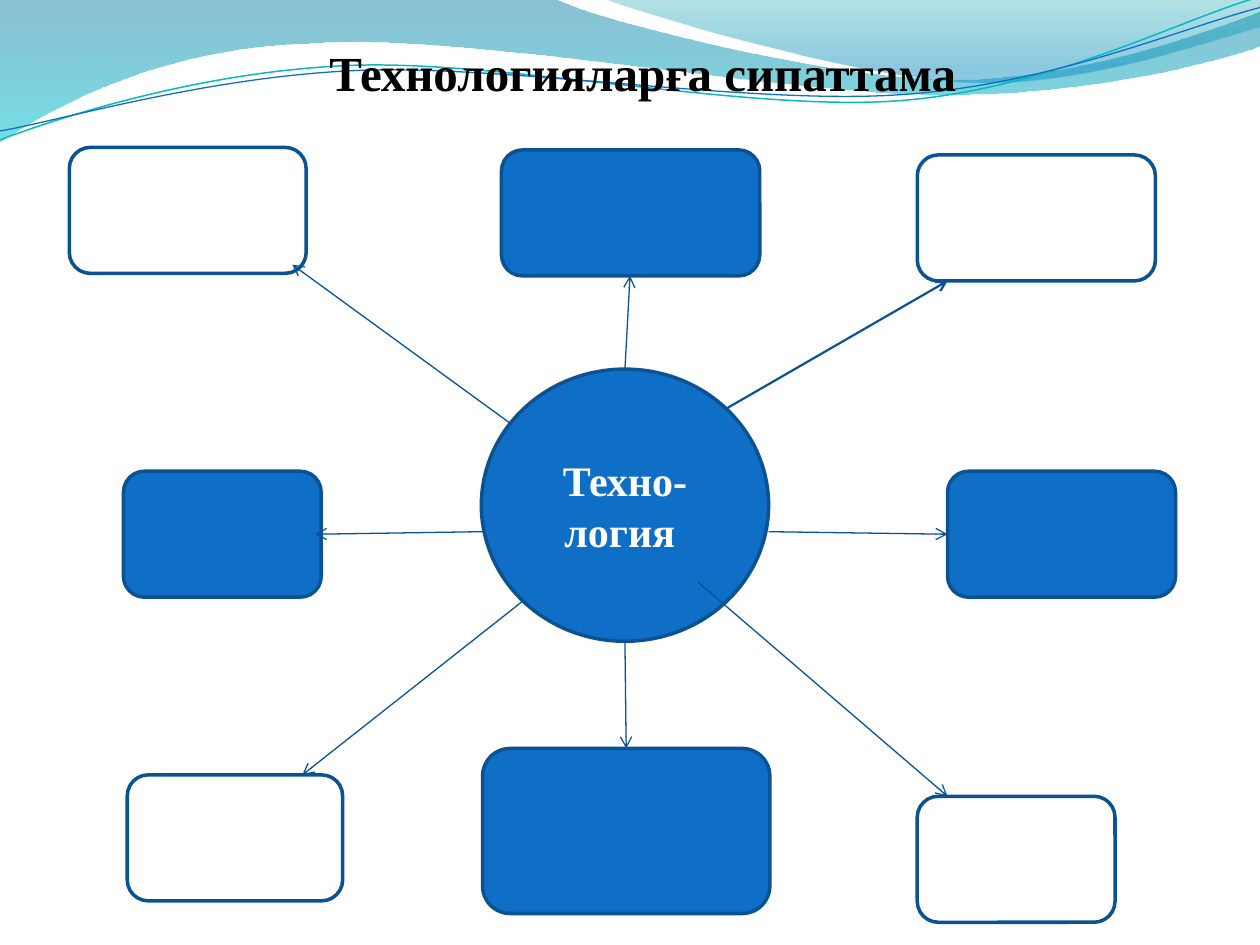
from math import cos, radians, sin
from pptx import Presentation
from pptx.dml.color import RGBColor
from pptx.enum.shapes import MSO_CONNECTOR as LINK, MSO_SHAPE as SHAPE
from pptx.enum.text import MSO_ANCHOR as ANCHOR, PP_ALIGN as ALIGN
from pptx.oxml.ns import qn
from pptx.util import Inches, Pt
from lxml.etree import SubElement as add

BLUE, EDGE, ARROW = "0F6FC6", "0B5292", "095295"
TILT = 2.7


def paint(target, color):
    if hasattr(target, "solid"):
        target.solid()
        target = target.fore_color
    elif hasattr(target, "color"):
        target = target.color
    target.rgb = RGBColor.from_string(color)


def write(shape, text, size=24, color="FFFFFF", anchor=ANCHOR.MIDDLE):
    frame = shape.text_frame
    frame.word_wrap = True
    frame.vertical_anchor = anchor
    para = frame.paragraphs[0]
    para.alignment = ALIGN.CENTER
    run = para.add_run()
    run.text = text
    run.font.name = "Times New Roman"
    run.font.size = Pt(size)
    run.font.bold = True
    paint(run.font, color)


deck = Presentation()
deck.slide_width, deck.slide_height = Inches(10), Inches(7.5)
slide = deck.slides.add_slide(deck.slide_layouts[6])
shapes = slide.shapes

waves = [
    ([(0, 0), (4.4, -0.01), (4.76, 0.17, 6.64, 0.63, 7.58, 0.63),
      (8.53, 0.63, 9.58, 0.26, 10, 0.09), (10.01, 0.36),
      (9.83, 0.44, 8.7, 0.76, 7.46, 0.75), (6.22, 0.75, 3.82, 0.28, 2.57, 0.34),
      (1.29, 0.36, 0.46, 0.83, -0.01, 1.13)],
     [(0, "0074A1", 45), (1, "00C6CF", 55)], None),
    ([(4.79, -0.01), (5.09, 0.11, 6.82, 0.62, 7.69, 0.65),
      (8.56, 0.69, 9.61, 0.32, 10, 0.21), (10, 0)],
     [(0, "00A1A9", 30), (0.8, "008BBF", 45)], None),
    ([(0, 1.11), (0.48, 0.93, 1.58, 0.57, 2.77, 0.52),
      (3.95, 0.47, 5.93, 0.89, 7.13, 0.8), (8.33, 0.71, 9.38, 0.15, 9.98, -0.02)],
     None, ("0AB8BF", 0.85, 4.99, 0.57)),
    ([(0, 1.04), (0.47, 0.96, 1.64, 0.61, 2.83, 0.56),
      (4.03, 0.51, 5.97, 0.84, 7.17, 0.75), (8.36, 0.67, 9.41, 0.21, 10, 0.06)],
     None, (BLUE, 0.75, 5, 0.59)),
]
for path, stops, line in waves:
    parts = [list(zip(part[::2], part[1::2])) for part in path]
    if line:
        color, width, mid_x, mid_y = line
        c, s = cos(radians(TILT)), sin(radians(TILT))
        parts = [[(mid_x + (x - mid_x) * c - (y - mid_y) * s,
                   mid_y + (x - mid_x) * s + (y - mid_y) * c)
                  for x, y in part] for part in parts]
    parts = [[(Inches(x), Inches(y)) for x, y in part] for part in parts]
    pen = shapes.build_freeform(*parts[0][0])
    pen.add_line_segments([part[-1] for part in parts[1:]], close=bool(stops))
    wave = pen.convert_to_shape()
    wave.shadow.inherit = False
    edges = list(wave.element.spPr.iter(qn("a:lnTo")))
    for edge, part in zip(edges, parts[1:]):
        if len(part) == 3:
            edge.tag = qn("a:cubicBezTo")
            for x, y in part[:2]:
                add(edge, qn("a:pt"), x=str(x - wave.left), y=str(y - wave.top))
            edge.append(edge[0])
    if stops:
        wave.line.fill.background()
        wave.fill.gradient()
        wave.fill.gradient_angle = 270
        for stop, (place, color, alpha) in zip(wave.fill.gradient_stops, stops):
            stop.position = place
            paint(stop, color)
        tints = wave.element.spPr.iter(qn("a:srgbClr"))
        for tint, (place, color, alpha) in zip(list(tints), stops):
            add(tint, qn("a:alpha"), val=str(alpha * 1000))
    else:
        wave.rotation = 360 - TILT
        wave.fill.background()
        paint(wave.line, color)
        wave.line.width = Pt(width)

title = shapes.add_textbox(Inches(1.14), Inches(0.29), Inches(7.87), Inches(0.79))
title.text_frame.margin_left = Inches(0.15)
write(title, "Технологияларға сипаттама", size=28, color="000000", anchor=ANCHOR.TOP)

nodes = [
    (3.82, 2.93, 2.28, 2.16, BLUE, "Техно-логия "),
    (7.28, 1.23, 1.89, 1, None, ""),
    (7.52, 3.74, 1.81, 1, BLUE, ""),
    (7.28, 6.32, 1.57, 1, None, ""),
    (3.98, 1.19, 2.05, 1, BLUE, ""),
    (0.98, 3.74, 1.57, 1, BLUE, ""),
    (3.83, 5.94, 2.28, 1.31, BLUE, ""),
    (1.01, 6.15, 1.71, 1, None, ""),
    (0.55, 1.17, 1.88, 1, None, ""),
]
for *box, fill, text in nodes:
    kind = SHAPE.OVAL if text else SHAPE.ROUNDED_RECTANGLE
    node = shapes.add_shape(kind, *map(Inches, box))
    node.shadow.inherit = False
    if fill:
        paint(node.fill, fill)
    else:
        node.fill.background()
    paint(node.line, EDGE)
    node.line.width = Pt(2)
    if text:
        write(node, text)

arrows = [
    (4.96, 2.93, 5, 2.19, 0.75),
    (5.77, 3.24, 7.52, 2.23, 1.25),
    (6.1, 4.22, 7.52, 4.24, 0.75),
    (5.54, 4.62, 7.52, 6.32, 0.75),
    (4.15, 4.77, 2.4, 6.15, 0.75),
    (4.96, 5.09, 4.97, 5.94, 0.75),
    (3.83, 4.22, 2.5, 4.24, 0.75),
    (4.05, 3.36, 2.32, 2.1, 0.75),
]
for *ends, width in arrows:
    arrow = shapes.add_connector(LINK.STRAIGHT, *map(Inches, ends))
    paint(arrow.line, ARROW)
    arrow.line.width = Pt(width)
    add(arrow.line._get_or_add_ln(), qn("a:tailEnd"), type="arrow")
    add(arrow.element.spPr, qn("a:effectLst"))

deck.save("out.pptx")
